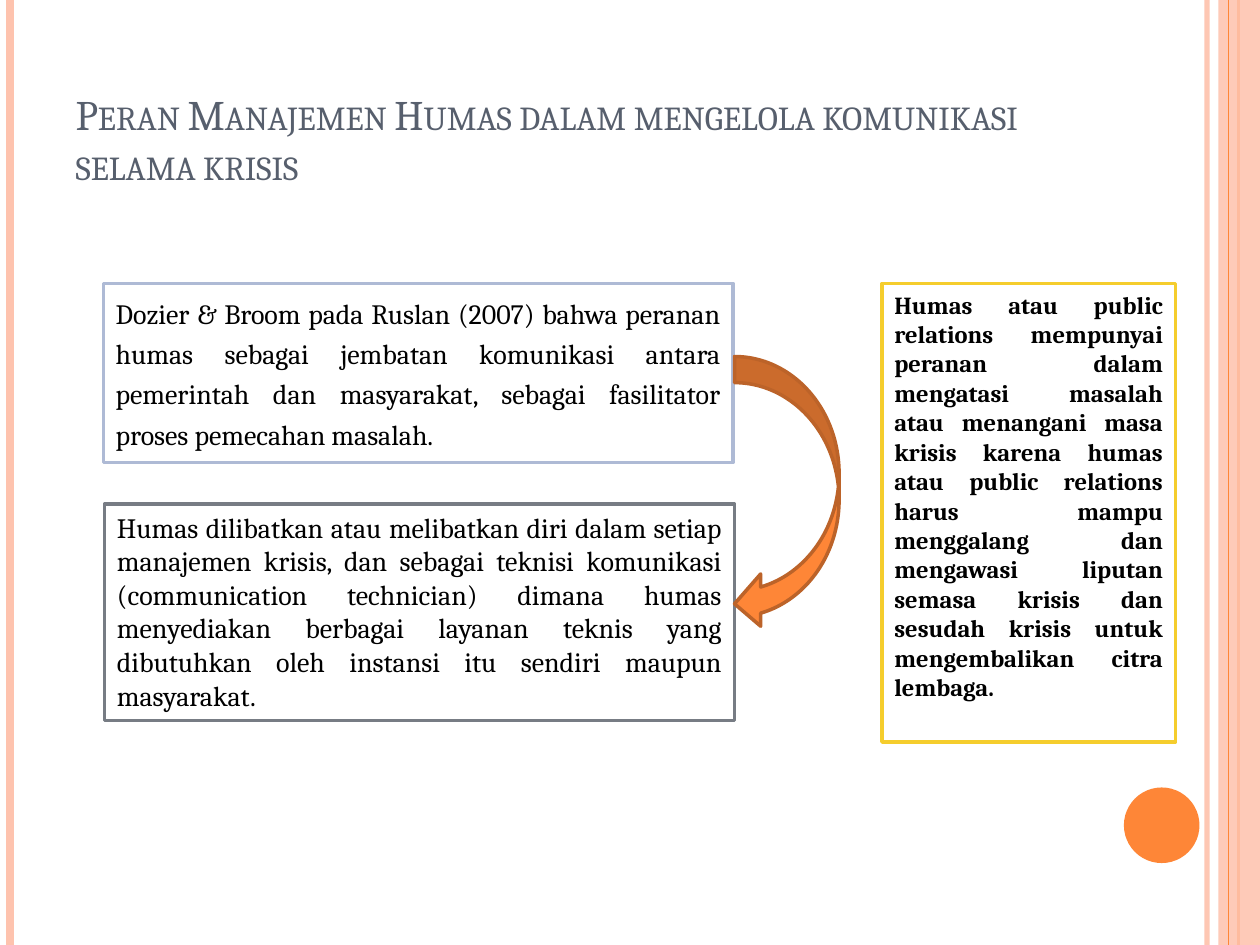
"""Build a slide on the role of public relations in crisis communication."""
from dataclasses import dataclass

from lxml.etree import SubElement
from pptx import Presentation
from pptx.dml.color import RGBColor
from pptx.enum.shapes import MSO_CONNECTOR as Connector, MSO_SHAPE as Shape
from pptx.enum.text import MSO_ANCHOR as Anchor, PP_ALIGN as Align
from pptx.oxml.ns import qn
from pptx.util import Inches, Pt

COLORS = {
    "white": "FFFFFF", "black": "000000", "slate": "575F6D",
    "peach": "FEC3AE", "orange": "FE8637", "rust": "BC6329",
    "blue": "AEBAD5", "gray": "777C84", "yellow": "F5CD2D",
}
HEIGHT = 7.5


@dataclass
class Stripe:
    x: float
    color: str
    weight: float
    opacity: int = 100


@dataclass
class Box:
    left: float
    top: float
    width: float
    height: float
    fill: str
    border: str = ""
    kind: Shape = Shape.RECTANGLE
    opacity: int = 100


@dataclass
class Panel:
    box: Box
    text: str
    font: dict
    paragraph: dict


STRIPES = [
    Stripe(9.58, "peach", 3, 93),
    Stripe(0.08, "peach", 4.5),
    Stripe(9.83, "orange", 1.5),
]
RAIL = Box(9.67, 0, 0.33, HEIGHT, "peach", opacity=87)
RAIL_EDGE = Stripe(9.75, "orange", 0.75)
DOT = Box(8.92, 6.25, 0.6, 0.6, "orange", kind=Shape.OVAL)
ARROW = Box(5.83, 2.83, 0.83, 2.17, "orange", "rust", Shape.CURVED_LEFT_ARROW)

TITLE = "Peran Manajemen Humas dalam mengelola komunikasi selama krisis"
BODY = {"name": "Cambria", "size": Pt(16), "bold": False}
JUSTIFIED = {"alignment": Align.JUSTIFY}
PANELS = [
    Panel(Box(0.82, 2.25, 5, 1.42, "white", "blue"),
          "Dozier & Broom pada Ruslan (2007) bahwa peranan humas sebagai jembatan "
          "komunikasi antara pemerintah dan masyarakat, sebagai fasilitator proses "
          "pemecahan masalah.",
          BODY, JUSTIFIED | {"line_spacing": 1.2, "space_before": Pt(6)}),
    Panel(Box(0.83, 4, 5, 1.72, "white", "gray"),
          "Humas dilibatkan atau melibatkan diri dalam setiap manajemen krisis, dan "
          "sebagai teknisi komunikasi (communication technician) dimana humas "
          "menyediakan berbagai layanan teknis yang dibutuhkan oleh instansi itu "
          "sendiri maupun masyarakat.",
          BODY, JUSTIFIED),
    Panel(Box(7, 2.25, 2.33, 3.64, "white", "yellow"),
          "Humas atau public relations mempunyai peranan dalam mengatasi masalah atau "
          "menangani masa krisis karena humas atau public relations harus mampu "
          "menggalang dan mengawasi liputan semasa krisis dan sesudah krisis untuk "
          "mengembalikan citra lembaga.",
          BODY | {"size": Pt(14), "bold": True}, JUSTIFIED),
]


def rgb(color: str) -> RGBColor:
    """Look up a named colour."""
    return RGBColor.from_string(COLORS[color])


def apply(target, values: dict) -> None:
    """Set each format value on the target."""
    for name, value in values.items():
        setattr(target, name, value)


def set_opacity(element, percent: int) -> None:
    """Make the first solid colour of an element partly transparent."""
    if percent < 100:
        color = next(element.iter(qn("a:srgbClr")))
        SubElement(color, qn("a:alpha"), val=str(percent * 1000))


def draw_stripe(slide, stripe: Stripe) -> None:
    """Draw a vertical line over the full slide height."""
    x = Inches(stripe.x)
    line = slide.shapes.add_connector(Connector.STRAIGHT, x, 0, x, Inches(HEIGHT))
    line.line.color.rgb = rgb(stripe.color)
    line.line.width = Pt(stripe.weight)
    properties = line._element.spPr
    set_opacity(properties, stripe.opacity)
    SubElement(properties, qn("a:effectLst"))


def draw_box(slide, box: Box):
    """Draw a filled shape with an optional border."""
    shape = slide.shapes.add_shape(
        box.kind, *map(Inches, (box.left, box.top, box.width, box.height)))
    shape.shadow.inherit = False
    shape.fill.solid()
    shape.fill.fore_color.rgb = rgb(box.fill)
    set_opacity(shape._element.spPr, box.opacity)
    if box.border:
        shape.line.color.rgb = rgb(box.border)
        shape.line.width = Pt(2)
    else:
        shape.line.fill.background()
    return shape


def draw_panel(slide, panel: Panel) -> None:
    """Draw a bordered box with justified text."""
    frame = draw_box(slide, panel.box).text_frame
    apply(frame, {"word_wrap": True, "vertical_anchor": Anchor.TOP})
    paragraph = frame.paragraphs[0]
    apply(paragraph, panel.paragraph)
    run = paragraph.add_run()
    run.text = panel.text
    apply(run.font, panel.font)
    run.font.color.rgb = rgb("black")


def write_title(slide) -> None:
    """Place and format the title in small capitals."""
    title = slide.shapes.title
    apply(title, {"left": Inches(0.5), "top": Inches(0.3),
                  "width": Inches(8.17), "height": Inches(1.25)})
    frame = title.text_frame
    apply(frame, {"word_wrap": True, "vertical_anchor": Anchor.BOTTOM})
    paragraph = frame.paragraphs[0]
    paragraph.alignment = Align.LEFT
    run = paragraph.add_run()
    run.text = TITLE
    apply(run.font, {"name": "Cambria", "size": Pt(24), "bold": False})
    run.font.color.rgb = rgb("slate")
    run.font._element.set("cap", "small")


def main() -> None:
    """Assemble and save the slide."""
    deck = Presentation()
    apply(deck, {"slide_width": Inches(10), "slide_height": Inches(HEIGHT)})
    slide = deck.slides.add_slide(deck.slide_layouts.get_by_name("Title Only"))
    for stripe in STRIPES:
        draw_stripe(slide, stripe)
    draw_box(slide, RAIL)
    draw_stripe(slide, RAIL_EDGE)
    draw_box(slide, DOT)
    write_title(slide)
    *left_panels, conclusion = PANELS
    for panel in left_panels:
        draw_panel(slide, panel)
    draw_box(slide, ARROW)
    draw_panel(slide, conclusion)
    deck.save("out.pptx")


if __name__ == "__main__":
    main()
